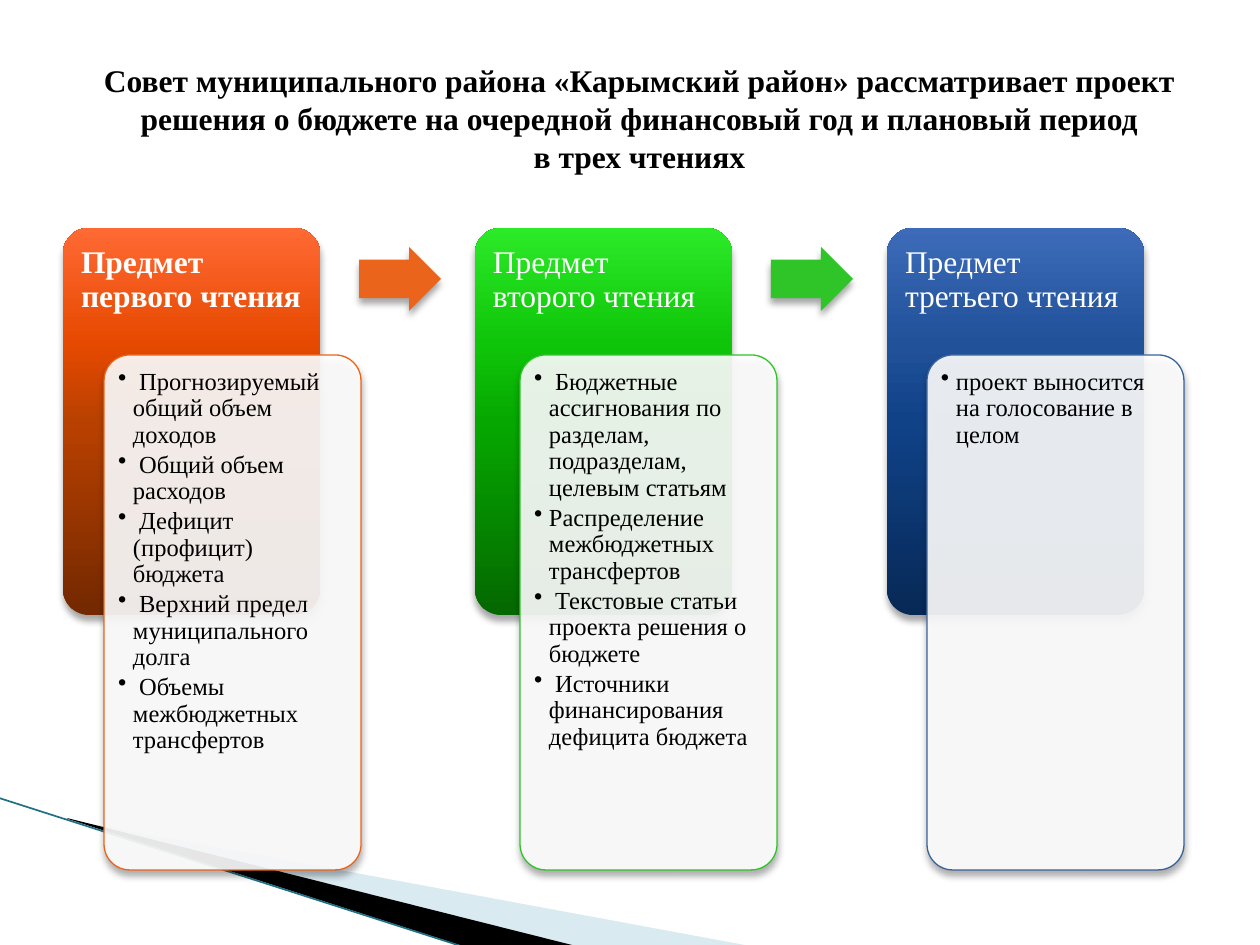
"""Build the slide on the three readings of the district budget."""
from dataclasses import dataclass

from lxml.etree import SubElement
from pptx import Presentation
from pptx.dml.color import RGBColor
from pptx.enum.shapes import MSO_CONNECTOR, MSO_SHAPE
from pptx.enum.text import PP_ALIGN
from pptx.oxml.ns import qn
from pptx.shapes.autoshape import Shape
from pptx.shapes.shapetree import SlideShapes
from pptx.text.text import TextFrame, _Paragraph
from pptx.util import Emu, Pt

SCALE = 914400 / 126


@dataclass(frozen=True)
class Theme:
    font: str = "Times New Roman"
    heading: int = 18
    body: int = 14
    ink: str = "000000"
    paper: str = "FFFFFF"
    swoosh: str = "A0CBDC"
    swoosh_line: str = "1F7085"
    orange: str = "EB641B"
    green: str = "2FC529"
    blue: str = "39639D"
    orange_ramp: tuple[str, ...] = ("732800", "B94100", "E64900", "FF6933")
    green_ramp: tuple[str, ...] = ("046800", "06A800", "0FC509", "2CEA28")
    blue_ramp: tuple[str, ...] = ("072956", "104288", "205199", "3D6BB9")
    ramp_stops: tuple[int, ...] = (0, 50, 70, 100)


@dataclass(frozen=True)
class Box:
    x: int
    y: int
    w: int
    h: int

    def emu(self) -> tuple[Emu, ...]:
        return tuple(px(v) for v in (self.x, self.y, self.w, self.h))


@dataclass(frozen=True)
class Reading:
    head: str
    bold: bool
    panel_x: int
    ramp: tuple[str, ...]
    accent: str
    items: tuple[str, ...]


T = Theme()
CARD = Box(63, 228, 257, 387)
PITCH = 412
HEAD_H = 102
PANEL_Y, PANEL_H = 355, 515
ARROW = Box(359, 247, 82, 64)
TITLE = (
    "Совет муниципального района «Карымский район» рассматривает проект "
    "решения о бюджете на очередной финансовый год и плановый период",
    "в трех чтениях",
)
READINGS = (
    Reading("Предмет первого чтения", True, 104, T.orange_ramp, T.orange, (
        " Прогнозируемый общий объем доходов",
        " Общий объем расходов",
        " Дефицит (профицит) бюджета",
        " Верхний предел муниципального долга",
        " Объемы межбюджетных трансфертов",
    )),
    Reading("Предмет второго чтения", False, 520, T.green_ramp, T.green, (
        " Бюджетные ассигнования по разделам, подразделам, целевым статьям",
        "Распределение межбюджетных трансфертов",
        " Текстовые статьи проекта решения о бюджете",
        " Источники финансирования дефицита бюджета",
    )),
    Reading("Предмет третьего чтения", False, 927, T.blue_ramp, T.blue, (
        "проект выносится на голосование в целом",
    )),
)


def px(n: int) -> Emu:
    return Emu(round(n * SCALE))


def rgb(color: str) -> RGBColor:
    return RGBColor.from_string(color)


def paint(sp: Shape, color: str, alpha: int = 100) -> None:
    sp.fill.solid()
    sp.fill.fore_color.rgb = rgb(color)
    if alpha < 100:
        clr = sp.element.spPr.find(qn("a:solidFill")).find(qn("a:srgbClr"))
        SubElement(clr, qn("a:alpha"), val=str(alpha * 1000))


def paint_ramp(sp: Shape, ramp: tuple[str, ...]) -> None:
    sp.fill.gradient()
    sp.fill.gradient_angle = 90
    stops = sp.element.spPr.find(qn("a:gradFill")).find(qn("a:gsLst"))
    for gs in list(stops):
        stops.remove(gs)
    for pos, color in zip(T.ramp_stops, ramp):
        gs = SubElement(stops, qn("a:gs"), pos=str(pos * 1000))
        SubElement(gs, qn("a:srgbClr"), val=color)


def add_block(shapes: SlideShapes, kind: MSO_SHAPE, box: Box, *adj: float) -> Shape:
    sp = shapes.add_shape(kind, *box.emu())
    for i, value in enumerate(adj):
        sp.adjustments[i] = value
    sp.line.fill.background()
    sp.shadow.inherit = False
    effects = sp.element.spPr.find(qn("a:effectLst"))
    shadow = SubElement(effects, qn("a:outerShdw"), blurRad=str(Pt(4)),
                        dist=str(Pt(3)), dir="5400000", rotWithShape="0")
    clr = SubElement(shadow, qn("a:srgbClr"), val=T.ink)
    SubElement(clr, qn("a:alpha"), val="35000")
    return sp


def add_text(shapes: SlideShapes, box: Box, left: int, top: int, bottom: int) -> TextFrame:
    tf = shapes.add_textbox(*box.emu()).text_frame
    tf.word_wrap = True
    tf.margin_left = tf.margin_right = px(left)
    tf.margin_top, tf.margin_bottom = px(top), px(bottom)
    return tf


def add_run(p: _Paragraph, text: str, size: int, color: str, bold: bool = False) -> None:
    r = p.add_run()
    r.text = text
    r.font.name, r.font.size, r.font.bold = T.font, Pt(size), bold
    r.font.color.rgb = rgb(color)


def next_paragraph(tf: TextFrame, index: int) -> _Paragraph:
    return tf.add_paragraph() if index else tf.paragraphs[0]


def add_bullets(tf: TextFrame, items: tuple[str, ...]) -> None:
    for i, item in enumerate(items):
        p = next_paragraph(tf, i)
        p.line_spacing, p.space_after = 0.9, Pt(2)
        ppr = p._p.get_or_add_pPr()
        ppr.set("marL", str(px(15)))
        ppr.set("indent", str(-px(15)))
        SubElement(ppr, qn("a:buChar"), char="•")
        add_run(p, item, T.body, T.ink)


def add_reading(shapes: SlideShapes, index: int, item: Reading) -> None:
    shift = index * PITCH
    x = CARD.x + shift
    card = add_block(shapes, MSO_SHAPE.ROUNDED_RECTANGLE, Box(x, CARD.y, CARD.w, CARD.h), 0.1)
    paint_ramp(card, item.ramp)
    tf = add_text(shapes, Box(x, CARD.y, CARD.w, HEAD_H), 18, 18, 9)
    tf.paragraphs[0].line_spacing = 0.9
    add_run(tf.paragraphs[0], item.head, T.heading, T.paper, item.bold)
    box = Box(item.panel_x, PANEL_Y, CARD.w, PANEL_H)
    panel = add_block(shapes, MSO_SHAPE.ROUNDED_RECTANGLE, box, 0.1)
    paint(panel, T.paper, 90)
    panel.line.color.rgb, panel.line.width = rgb(item.accent), Pt(0.75)
    add_bullets(add_text(shapes, box, 14, 14, 14), item.items)
    if index < len(READINGS) - 1:
        box = Box(ARROW.x + shift, ARROW.y, ARROW.w, ARROW.h)
        paint(add_block(shapes, MSO_SHAPE.RIGHT_ARROW, box, 0.6, 0.5), item.accent)


def add_swoosh(shapes: SlideShapes, points: tuple[tuple[int, int], ...], color: str, alpha: int) -> None:
    builder = shapes.build_freeform(*points[0], scale=SCALE)
    builder.add_line_segments(points[1:], close=True)
    sp = builder.convert_to_shape()
    paint(sp, color, alpha)
    sp.line.fill.background()
    sp.shadow.inherit = False


def main() -> None:
    prs = Presentation()
    prs.slide_width, prs.slide_height = px(1260), px(945)
    shapes = prs.slides.add_slide(prs.slide_layouts[6]).shapes
    add_swoosh(shapes, ((69, 820), (750, 946), (575, 946), (69, 819)), T.swoosh, 40)
    add_swoosh(shapes, ((67, 818), (576, 946), (469, 948), (68, 819)), T.ink, 100)
    edge = shapes.add_connector(MSO_CONNECTOR.STRAIGHT, px(-1), px(798), px(467), px(948))
    edge.line.color.rgb, edge.line.width = rgb(T.swoosh_line), Pt(0.95)
    SubElement(edge.element.spPr, qn("a:effectLst"))
    for i, item in enumerate(READINGS):
        add_reading(shapes, i, item)
    tf = add_text(shapes, Box(74, 55, 1131, 127), 13, 6, 6)
    for i, line in enumerate(TITLE):
        p = next_paragraph(tf, i)
        p.alignment = PP_ALIGN.CENTER
        add_run(p, line, T.heading, T.ink, True)
    prs.save("out.pptx")


if __name__ == "__main__":
    main()
